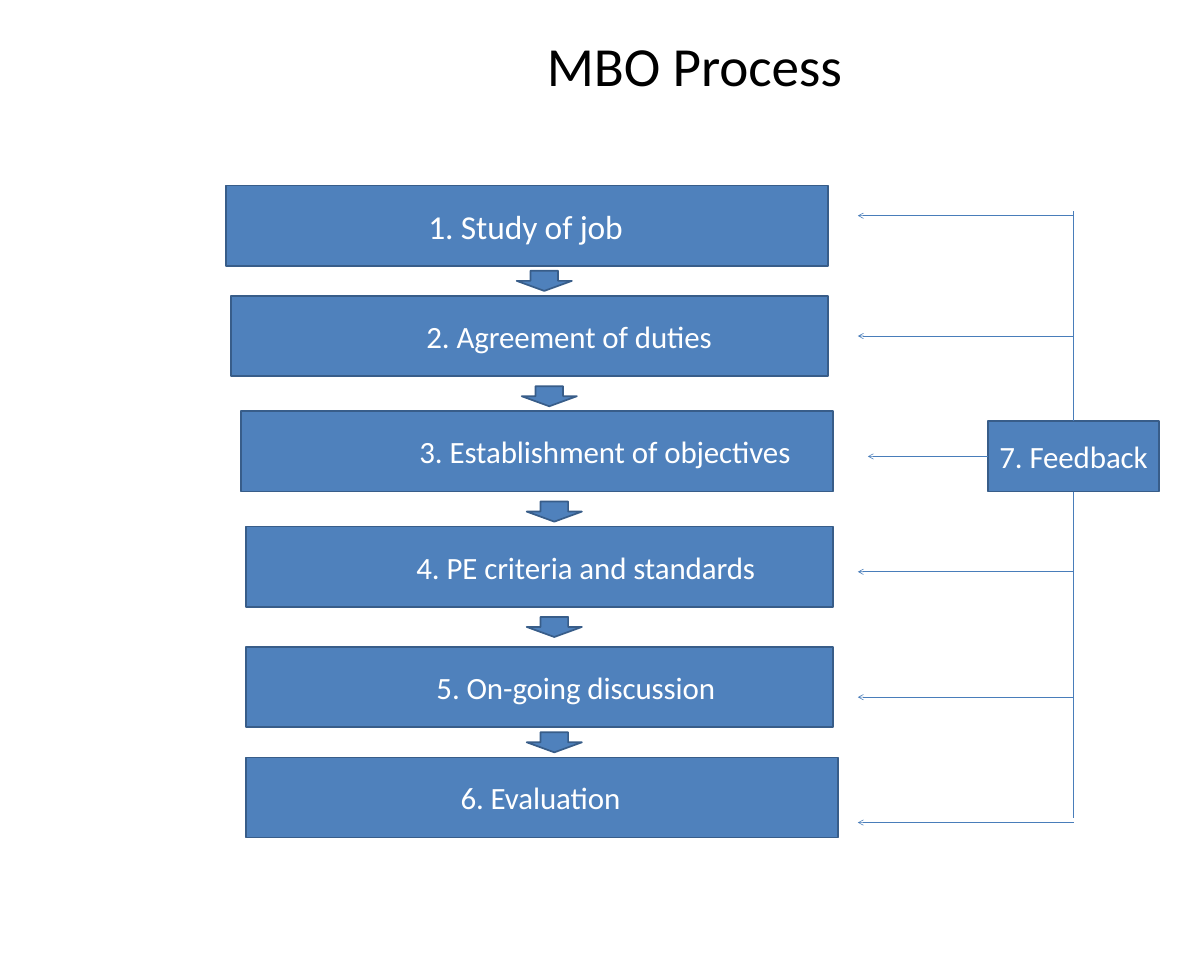
import pptx
import pptx.util
import pptx.dml.color
import pptx.enum.shapes
import pptx.enum.text
import pptx.oxml.ns
import lxml.etree

PX = 15240
COLORS = {
    "fill": "4F81BC",
    "outline": "385D89",
    "connector": "497DBA",
    "title": "000000",
    "label": "FFFFFF",
}
STEP_HEIGHT = 80
STEPS = [
    ("1. Study of job", 225, 185, 600, 202, 40),
    ("2. Agreement of duties", 230, 295, 595, 195, 37),
    ("3. Establishment of objectives", 240, 410, 590, 178, 37),
    ("4. PE criteria and standards", 245, 525, 585, 170, 37),
    ("5. On-going discussion", 245, 645, 585, 190, 37),
    ("6. Evaluation", 245, 755, 590, 214, 37),
]
ARROW_LEFTS = [515, 520, 525, 525, 525]
FEEDBACK_ROWS = [215, 335, 570, 695, 820]


def px(*lengths):
    return [pptx.util.Emu(length * PX) for length in lengths]


def color(name):
    return pptx.dml.color.RGBColor.from_string(COLORS[name])


def write_text(shape, text, size, color_name, left=0, centered=False):
    frame = shape.text_frame
    frame.margin_left = pptx.util.Emu(left * PX)
    frame.margin_right = frame.margin_top = frame.margin_bottom = 0
    frame.word_wrap = not centered
    frame.vertical_anchor = pptx.enum.text.MSO_ANCHOR.MIDDLE
    frame.text = text
    para = frame.paragraphs[0]
    alignments = pptx.enum.text.PP_ALIGN
    para.alignment = alignments.CENTER if centered else alignments.LEFT
    span = para.runs[0]
    span.font.name = "Calibri"
    span.font.size = pptx.util.Pt(size)
    span.font.color.rgb = color(color_name)
    span._r.get_or_add_rPr().set("spc", "-10")


def add_block(slide, kind, box):
    shape = slide.shapes.add_shape(kind, *px(*box))
    shape.shadow.inherit = False
    shape.fill.solid()
    shape.fill.fore_color.rgb = color("fill")
    shape.line.color.rgb = color("outline")
    shape.line.width = pptx.util.Pt(2.04)
    return shape


def add_line(slide, start, end, arrow=False):
    line = slide.shapes.add_connector(
        pptx.enum.shapes.MSO_CONNECTOR.STRAIGHT, *px(*start, *end))
    line.line.color.rgb = color("connector")
    line.line.width = pptx.util.Pt(0.72)
    if arrow:
        head = lxml.etree.SubElement(
            line.line._get_or_add_ln(), pptx.oxml.ns.qn("a:tailEnd"))
        head.set("type", "arrow")
    lxml.etree.SubElement(
        line._element.spPr, pptx.oxml.ns.qn("a:effectLst"))


def add_title(slide, box):
    title = slide.shapes.add_textbox(*px(*box))
    write_text(title, "MBO Process", 66, "title")


def add_steps(slide):
    for text, left, top, width, indent, size in STEPS:
        step = add_block(slide, pptx.enum.shapes.MSO_SHAPE.RECTANGLE,
                         (left, top, width, STEP_HEIGHT))
        write_text(step, text, size, "label", left=indent)
    for index, left in enumerate(ARROW_LEFTS):
        add_block(slide, pptx.enum.shapes.MSO_SHAPE.DOWN_ARROW,
                  (left, 270 + 115 * index, 55, 20))


def add_feedback(slide, box):
    left, top, width, height = box
    spine = left + width // 2
    middle = top + height // 2
    feedback = add_block(slide, pptx.enum.shapes.MSO_SHAPE.RECTANGLE, box)
    write_text(feedback, "7. Feedback", 37, "label", centered=True)
    add_line(slide, (spine, top), (spine, top - 210))
    add_line(slide, (spine, top + height), (spine, top + height + 325))
    for row in FEEDBACK_ROWS:
        add_line(slide, (spine, row), (spine - 215, row), arrow=True)
    add_line(slide, (left, middle), (left - 120, middle), arrow=True)


def main():
    deck = pptx.Presentation()
    deck.slide_width, deck.slide_height = px(1200, 960)
    slide = deck.slides.add_slide(deck.slide_layouts[6])
    add_title(slide, (545, 29, 310, 70))
    add_steps(slide)
    add_feedback(slide, (985, 420, 170, 70))
    deck.save("out.pptx")


if __name__ == "__main__":
    main()
